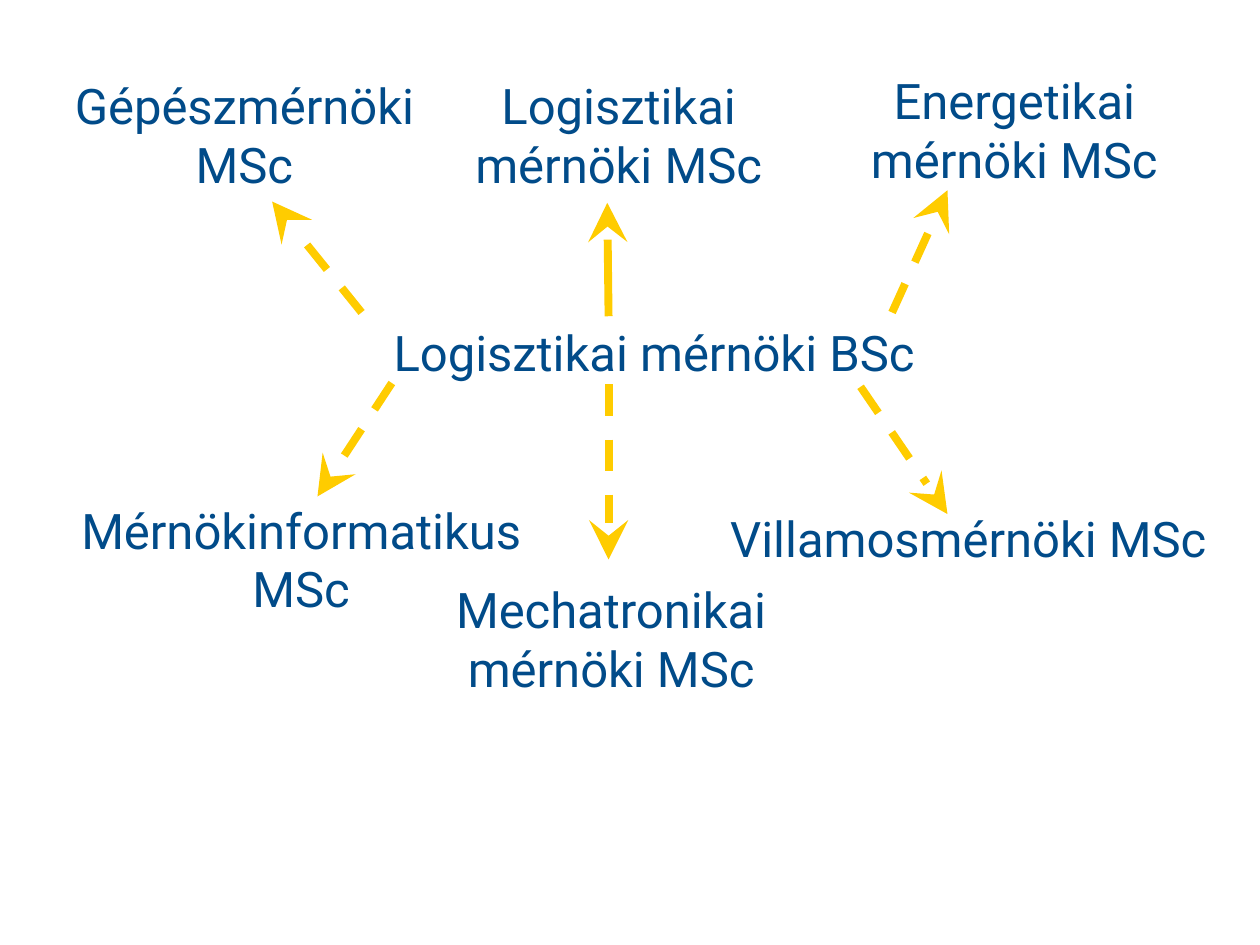
from lxml.etree import SubElement as Sub
from pptx import Presentation
from pptx.dml.color import RGBColor
from pptx.enum.dml import MSO_LINE as Dash
from pptx.enum.shapes import MSO_CONNECTOR as Link
from pptx.enum.text import MSO_AUTO_SIZE as Fit, PP_ALIGN as Align
from pptx.oxml.ns import qn
from pptx.util import Inches, Pt

BLUE, GOLD = "014B89", "FFCC00"

LABELS = [
    ("Logisztikai mérnöki BSc", 0.9, 2.51, 8.58, 0.57),
    ("Logisztikai mérnöki MSc", 3.26, 0.55, 3.3, 1.04),
    ("Gépészmérnöki MSc", 0.34, 0.55, 3.2, 1.04),
    ("Villamosmérnöki MSc", 5.5, 3.99, 4.37, 0.57),
    ("Mechatronikai mérnöki MSc", 3.1, 4.55, 3.5, 1.04),
    ("Energetikai mérnöki MSc", 6.37, 0.51, 3.36, 1.04),
    ("Mérnökinformatikus MSc", 0.5, 3.92, 3.78, 1.04),
]

ARROWS = [
    (4.83, 2.51, 4.82, 1.61, None),
    (3.11, 3.04, 2.52, 3.94, Dash.DASH),
    (4.83, 3.05, 4.83, 4.44, Dash.DASH),
    (6.83, 3.07, 7.52, 4.08, Dash.DASH),
    (2.87, 2.48, 2.16, 1.6, Dash.DASH),
    (7.08, 2.48, 7.52, 1.51, Dash.DASH),
]


def paint(code):
    """Return the colour for a hex string."""
    return RGBColor.from_string(code)


def write(slide, text, box, size=28, font="Roboto", color=BLUE, align=Align.CENTER):
    """Add a wrapped text box in the given box of inches."""
    frame = slide.shapes.add_textbox(*map(Inches, box)).text_frame
    frame.word_wrap = True
    frame.auto_size = Fit.SHAPE_TO_FIT_TEXT
    para = frame.paragraphs[0]
    para.alignment = align
    run = para.add_run()
    run.text = text
    run.font.size = Pt(size)
    run.font.name = font
    run.font.color.rgb = paint(color)


def arrow(slide, ends, dash=None, color=GOLD, width=4.5):
    """Draw a line with a large stealth head at its end."""
    link = slide.shapes.add_connector(Link.STRAIGHT, *map(Inches, ends))
    link.line.color.rgb = paint(color)
    link.line.width = Pt(width)
    if dash:
        link.line.dash_style = dash
    props = link.line._get_or_add_ln()
    Sub(props, qn("a:tailEnd"), type="stealth", w="lg", len="lg")
    Sub(link._element.spPr, qn("a:effectLst"))


def draw_map(slide, left, top):
    """Place the degree labels and arrows from a top left corner."""
    for text, x, y, wide, high in LABELS:
        write(slide, text, (left + x, top + y, wide, high))
    for x, y, to_x, to_y, dash in ARROWS:
        arrow(slide, (left + x, top + y, left + to_x, top + to_y), dash)


def main():
    """Build and save the slide."""
    deck = Presentation()
    deck.slide_width, deck.slide_height = Inches(10), Inches(7.5)
    slide = deck.slides.add_slide(deck.slide_layouts[6])
    slide.background.fill.solid()
    slide.background.fill.fore_color.rgb = paint("FFFFFF")
    draw_map(slide, 0, 0)
    deck.save("out.pptx")


if __name__ == "__main__":
    main()
